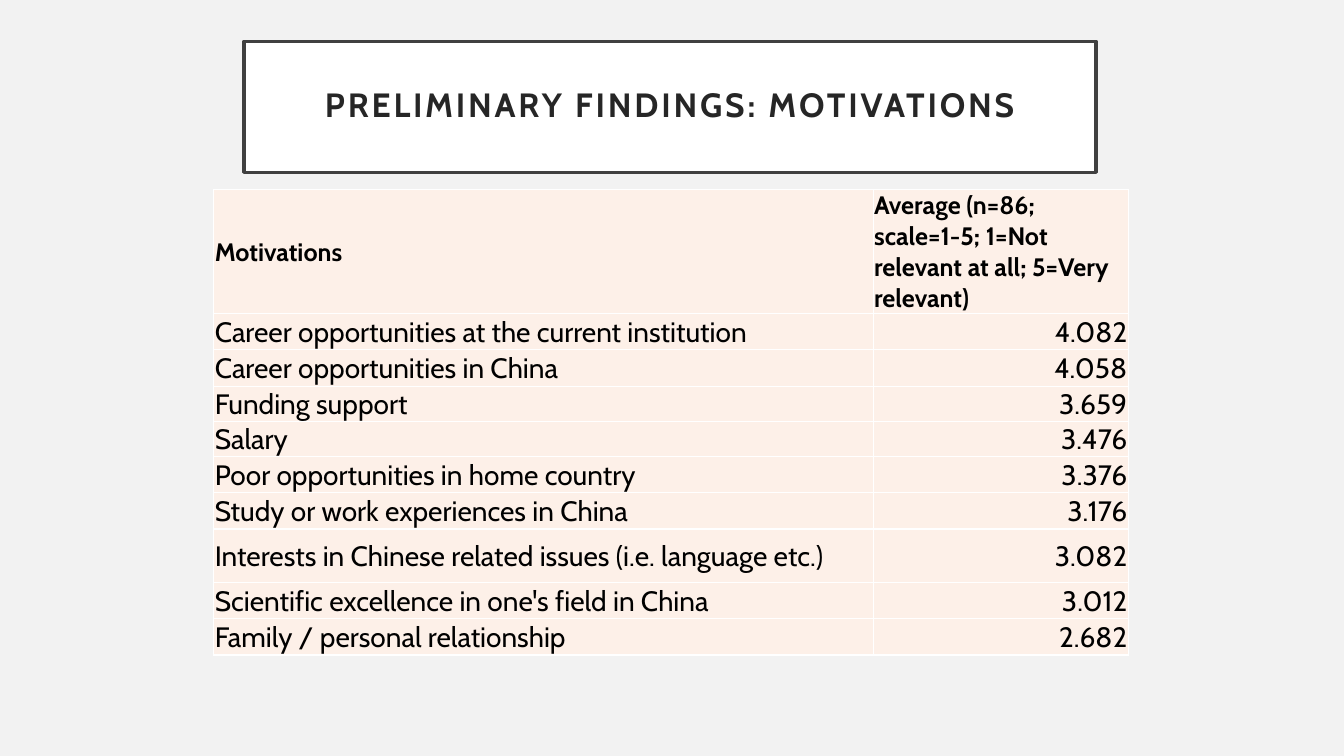
from dataclasses import dataclass

from lxml.etree import SubElement
from pptx import Presentation
from pptx.dml.color import RGBColor
from pptx.enum.text import MSO_ANCHOR, MSO_AUTO_SIZE, PP_ALIGN
from pptx.oxml.ns import qn
from pptx.util import Inches, Pt


@dataclass(frozen=True)
class Theme:
    font: str = "Cabin"
    background: str = "F2F2F2"
    title_fill: str = "FFFFFF"
    title_line: str = "404040"
    title_text: str = "262626"
    cell_fill: str = "FDF0E8"
    cell_border: str = "FFFFFF"
    cell_text: str = "000000"
    title_size: int = 24
    header_size: int = 18
    body_size: int = 20


class SlideBuilder:
    def __init__(self, slide, theme):
        self.slide = slide
        self.theme = theme
        self.fill(slide.background, theme.background)

    def fill(self, target, color):
        target.fill.solid()
        target.fill.fore_color.rgb = RGBColor.from_string(color)

    def format_text(self, frame, size, color, bold, align):
        for paragraph in frame.paragraphs:
            paragraph.alignment = align
            for run in paragraph.runs:
                run.font.name = self.theme.font
                run.font.size = Pt(size)
                run.font.bold = bold
                run.font.color.rgb = RGBColor.from_string(color)

    def title(self, text, left, top, width, height):
        theme = self.theme
        heading = self.slide.shapes.title
        heading.left, heading.top = Inches(left), Inches(top)
        heading.width, heading.height = Inches(width), Inches(height)
        self.fill(heading, theme.title_fill)
        heading.line.color.rgb = RGBColor.from_string(theme.title_line)
        heading.line.width = Pt(2.5)
        frame = heading.text_frame
        frame.text = text
        frame.word_wrap = True
        frame.auto_size = MSO_AUTO_SIZE.NONE
        frame.vertical_anchor = MSO_ANCHOR.MIDDLE
        frame.margin_left = frame.margin_right = Inches(0.2)
        frame.margin_top = frame.margin_bottom = Inches(0.2)
        self.format_text(frame, theme.title_size, theme.title_text, True, PP_ALIGN.CENTER)
        paragraph = frame.paragraphs[0]
        paragraph.line_spacing = 0.9
        paragraph.runs[0].font._element.set("spc", "200")

    def border(self, cell):
        properties = cell._tc.get_or_add_tcPr()
        for side in ("a:lnL", "a:lnR", "a:lnT", "a:lnB"):
            edge = SubElement(properties, qn(side), w=str(Pt(1)))
            solid = SubElement(edge, qn("a:solidFill"))
            SubElement(solid, qn("a:srgbClr"), val=self.theme.cell_border)

    def cell(self, cell, text, size, bold, align):
        cell.text_frame.text = text
        cell.vertical_anchor = MSO_ANCHOR.MIDDLE
        cell.margin_left = cell.margin_right = cell.margin_top = Inches(0.01)
        cell.margin_bottom = 0
        self.border(cell)
        self.fill(cell, self.theme.cell_fill)
        self.format_text(cell.text_frame, size, self.theme.cell_text, bold, align)

    def table(self, rows, left, top, widths, heights):
        table = self.slide.shapes.add_table(
            len(rows), len(widths), Inches(left), Inches(top),
            Inches(sum(widths)), Inches(sum(heights)),
        ).table
        table.horz_banding = False
        for column, width in zip(table.columns, widths):
            column.width = Inches(width)
        for index, (row, height) in enumerate(zip(rows, heights)):
            table.rows[index].height = Inches(height)
            header = index == 0
            size = self.theme.header_size if header else self.theme.body_size
            for position, text in enumerate(row):
                align = PP_ALIGN.RIGHT if position and not header else PP_ALIGN.LEFT
                self.cell(table.cell(index, position), text, size, header, align)


FINDINGS = [
    ("Motivations", "Average (n=86;\nscale=1-5; 1=Not relevant at all; 5=Very relevant)"),
    ("Career opportunities at the current institution", "4.082"),
    ("Career opportunities in China", "4.058"),
    ("Funding support", "3.659"),
    ("Salary", "3.476"),
    ("Poor opportunities in home country", "3.376"),
    ("Study or work experiences in China", "3.176"),
    ("Interests in Chinese related issues (i.e. language etc.)", "3.082"),
    ("Scientific excellence in one's field in China", "3.012"),
    ("Family / personal relationship", "2.682"),
]
ROW_HEIGHTS = [0.94, 0.36, 0.36, 0.32, 0.32, 0.36, 0.36, 0.53, 0.36, 0.36]


def main():
    presentation = Presentation()
    presentation.slide_width = Inches(13.33)
    presentation.slide_height = Inches(7.5)
    title_only = presentation.slide_layouts[5]
    builder = SlideBuilder(presentation.slides.add_slide(title_only), Theme())
    builder.title("PRELIMINARY FINDINGS: MOTIVATIONS", 2.42, 0.41, 8.45, 1.3)
    builder.table(FINDINGS, 2.12, 1.88, [6.54, 2.53], ROW_HEIGHTS)
    presentation.save("out.pptx")


if __name__ == "__main__":
    main()
